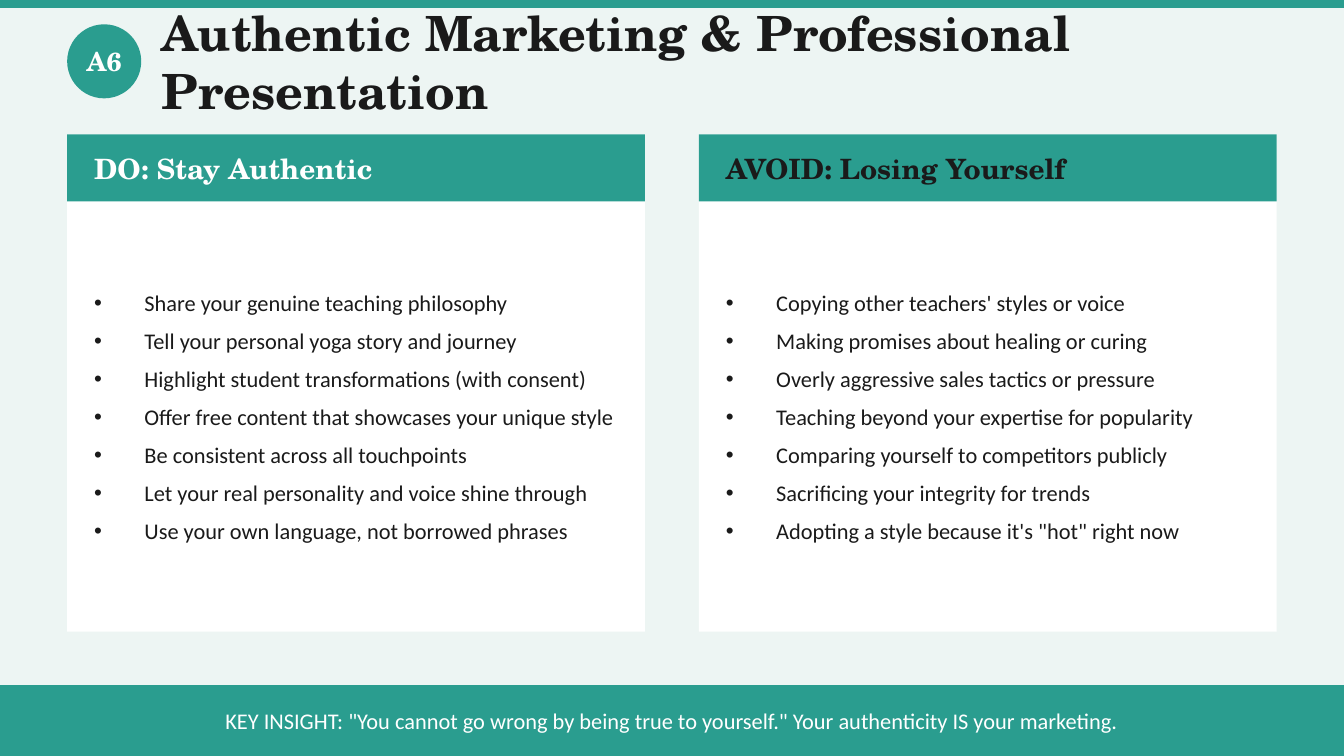
"""Build the authentic marketing slide with its do and avoid columns."""
from lxml.etree import SubElement
from pptx import Presentation
from pptx.dml.color import RGBColor
from pptx.enum.shapes import MSO_SHAPE
from pptx.enum.text import MSO_ANCHOR, MSO_AUTO_SIZE, PP_ALIGN
from pptx.oxml.ns import qn
from pptx.util import Cm, Pt

TEAL = RGBColor(0x2A, 0x9D, 0x8F)
MINT = RGBColor(0xED, 0xF5, 0xF3)
WHITE = RGBColor(0xFF, 0xFF, 0xFF)
INK = RGBColor(0x1A, 0x1A, 0x1A)
SERIF = "TeX Gyre Schola"
SANS = "Calibri"

WIDTH, HEIGHT, MARGIN = 25.4, 14.29, 1.27
CARD_TOP, CARD_WIDTH, CARD_HEIGHT, HEADER_HEIGHT = 2.54, 10.92, 9.4, 1.27
CARD_STEP = WIDTH - 2 * MARGIN - CARD_WIDTH
CARD_PADDING = 0.51
FOOTER_HEIGHT = 1.34
BULLET_INDENT = 0.95

COLUMNS = [
    ("DO: Stay Authentic", WHITE, [
        "Share your genuine teaching philosophy",
        "Tell your personal yoga story and journey",
        "Highlight student transformations (with consent)",
        "Offer free content that showcases your unique style",
        "Be consistent across all touchpoints",
        "Let your real personality and voice shine through",
        "Use your own language, not borrowed phrases",
    ]),
    ("AVOID: Losing Yourself", INK, [
        "Copying other teachers' styles or voice",
        "Making promises about healing or curing",
        "Overly aggressive sales tactics or pressure",
        "Teaching beyond your expertise for popularity",
        "Comparing yourself to competitors publicly",
        "Sacrificing your integrity for trends",
        "Adopting a style because it's \"hot\" right now",
    ]),
]


class SlideBuilder:
    """Hold the slide and the shared style of its elements."""

    def __init__(self, slide):
        self.slide = slide
        slide.background.fill.solid()
        slide.background.fill.fore_color.rgb = MINT

    def block(self, left, top, width, height, color=TEAL, kind=MSO_SHAPE.RECTANGLE):
        """Add a plain filled shape."""
        shape = self.slide.shapes.add_shape(kind, Cm(left), Cm(top), Cm(width), Cm(height))
        shape.shadow.inherit = False
        shape.fill.solid()
        shape.fill.fore_color.rgb = color
        shape.line.fill.background()
        return shape

    def label(self, shape, lines, size, color, font=SANS, align=PP_ALIGN.LEFT, bullets=False):
        """Fill a shape with styled paragraphs."""
        frame = shape.text_frame
        frame.word_wrap = True
        frame.auto_size = MSO_AUTO_SIZE.NONE
        frame.vertical_anchor = MSO_ANCHOR.MIDDLE
        frame.margin_left = frame.margin_right = frame.margin_top = frame.margin_bottom = 0
        frame.text = "\n".join(lines)
        for paragraph in frame.paragraphs:
            paragraph.alignment = align
            paragraph.space_before = Pt(0)
            if bullets:
                paragraph.space_after = Pt(6)
                properties = paragraph._p.get_or_add_pPr()
                properties.set("marL", str(Cm(BULLET_INDENT)))
                properties.set("indent", str(-Cm(BULLET_INDENT)))
                SubElement(properties, qn("a:buChar")).set("char", "•")
            paragraph.font.name = font
            paragraph.font.size = Pt(size)
            paragraph.font.bold = font == SERIF
            paragraph.font.color.rgb = color

    def placeholder(self, index, left, top, width, height, lines, size, color, **style):
        """Place a template placeholder in front of the shapes drawn so far."""
        shape = next(item for item in self.slide.placeholders
                     if item.placeholder_format.idx == index)
        shape.left, shape.top, shape.width, shape.height = map(Cm, (left, top, width, height))
        shape.element.getparent().append(shape.element)
        self.label(shape, lines, size, color, **style)

    def column(self, number, heading, heading_color, points):
        """Add a card with a heading band and a bulleted list."""
        left = MARGIN + number * CARD_STEP
        text_left, text_width = left + CARD_PADDING, CARD_WIDTH - 2 * CARD_PADDING
        self.block(left, CARD_TOP, CARD_WIDTH, CARD_HEIGHT, WHITE)
        self.block(left, CARD_TOP, CARD_WIDTH, HEADER_HEIGHT)
        self.placeholder(2 * number + 1, text_left, CARD_TOP, text_width, HEADER_HEIGHT,
                         [heading], 15, heading_color, font=SERIF)
        self.placeholder(2 * number + 2, text_left, 4.32, text_width, 7.11,
                         points, 12, INK, bullets=True)


def main():
    """Assemble and save the slide."""
    presentation = Presentation()
    presentation.slide_width, presentation.slide_height = Cm(WIDTH), Cm(HEIGHT)
    comparison_layout = presentation.slide_layouts[4]
    builder = SlideBuilder(presentation.slides.add_slide(comparison_layout))

    builder.block(0, 0, WIDTH, 0.15)
    badge = builder.block(MARGIN, 0.46, 1.4, 1.4, kind=MSO_SHAPE.OVAL)
    builder.label(badge, ["A6"], 14, WHITE, font=SERIF, align=PP_ALIGN.CENTER)
    builder.placeholder(0, 3.05, 0.46, 21.08, 1.4,
                        ["Authentic Marketing & Professional Presentation"],
                        26, INK, font=SERIF)
    for number, column in enumerate(COLUMNS):
        builder.column(number, *column)
    footer = builder.block(0, HEIGHT - FOOTER_HEIGHT, WIDTH, FOOTER_HEIGHT)
    builder.label(footer, ["KEY INSIGHT: \"You cannot go wrong by being true to yourself.\" "
                           "Your authenticity IS your marketing."],
                  12, WHITE, align=PP_ALIGN.CENTER)
    presentation.save("out.pptx")


if __name__ == "__main__":
    main()
